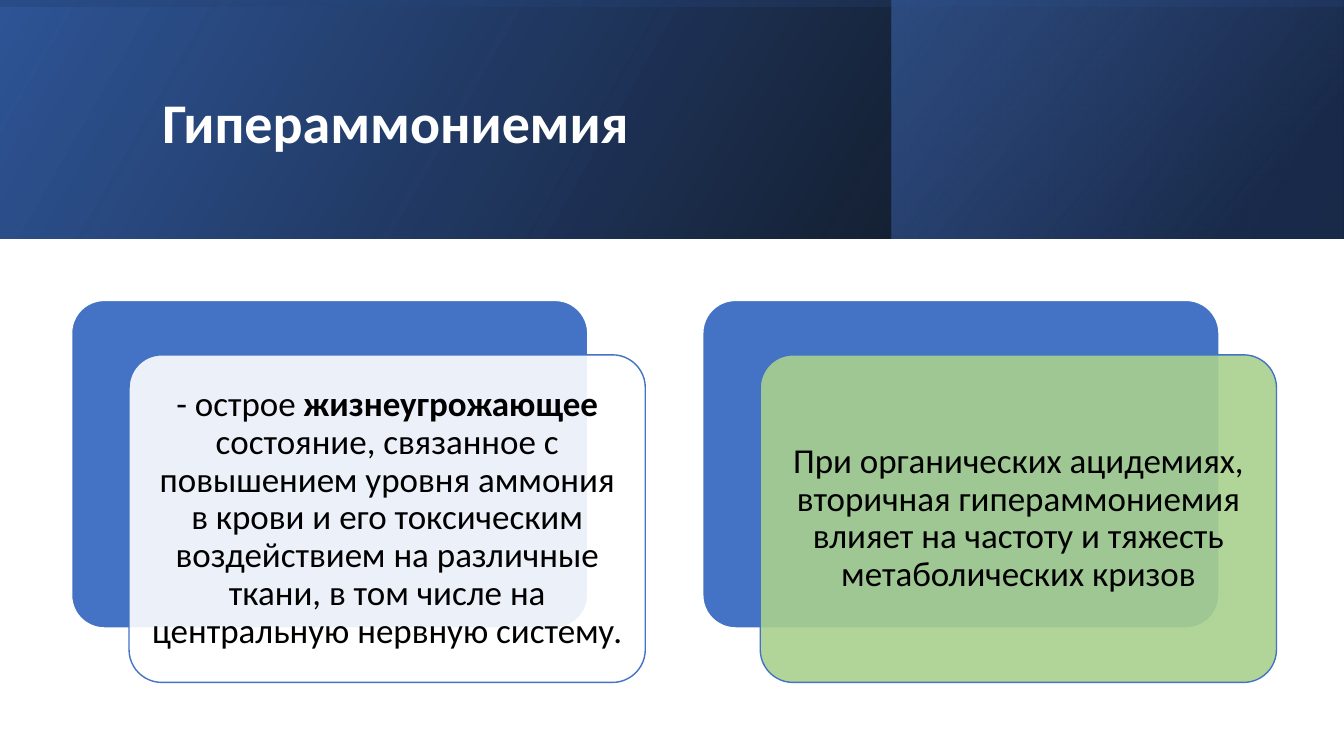
from lxml import etree
from pptx import Presentation
from pptx import util as u
from pptx.dml.color import RGBColor
from pptx.enum import shapes, text
from pptx.oxml import ns

WHITE = RGBColor(0xFF, 0xFF, 0xFF)
BLACK = RGBColor(0, 0, 0)
BLUE = RGBColor(0x44, 0x72, 0xC4)
DEEP_BLUE = RGBColor(0x2F, 0x55, 0x97)
NAVY = RGBColor(0x20, 0x38, 0x64)
GREEN = RGBColor(0xA9, 0xD1, 0x8E)
FONT = "Calibri"

# Content
TITLE = [("Гипераммониемия", True)]
CARDS = [
    (WHITE, [
        ("- острое ", False),
        ("жизнеугрожающее", True),
        (" состояние, связанное с повышением уровня аммония в крови и его токсическим "
         "воздействием на различные ткани, в том числе на центральную нервную систему.", False),
    ]),
    (GREEN, [
        ("При органических ацидемиях, вторичная гипераммониемия влияет на частоту "
         "и тяжесть метаболических кризов", False),
    ]),
]
# Header layers: box, rotation, gradient angle, stops (position %, colour, opacity %)
HEADER = [
    ((0, 0, 13.33, 2.37), 0, 330, [(0, BLACK, 96), (100, DEEP_BLUE, 100)]),
    ((8.84, 0, 4.48, 2.37), 0, 320, [(19, NAVY, 68), (100, BLUE, 48)]),
    ((5.48, -5.48, 2.37, 13.33), 270, 350, [(23, DEEP_BLUE, 16), (99, BLACK, 45)]),
]

# Layout of the cards
CARD_LEFT, CARD_TOP, CARD_STEP = 0.71, 2.98, 6.26
CARD_WIDTH, CARD_HEIGHT = 5.12, 3.25
FRONT_SHIFT_X, FRONT_SHIFT_Y = 0.57, 0.54


def add_element(parent, tag, **attributes):
    return etree.SubElement(parent, ns.qn(tag), {k: str(v) for k, v in attributes.items()})


def add_box(slide, kind, box):
    shape = slide.shapes.add_shape(kind, *[u.Inches(value) for value in box])
    shape.shadow.inherit = False
    return shape


def add_header_layer(slide, box, rotation, angle, stops):
    shape = add_box(slide, shapes.MSO_SHAPE.RECTANGLE, box)
    shape.rotation = rotation
    shape.line.fill.background()
    properties = shape._element.spPr
    properties.find(ns.qn("a:xfrm")).set("flipH", "1")
    gradient = etree.Element(ns.qn("a:gradFill"), rotWithShape="1")
    stop_list = add_element(gradient, "a:gsLst")
    for position, color, opacity in stops:
        stop = add_element(stop_list, "a:gs", pos=position * 1000)
        color_element = add_element(stop, "a:srgbClr", val=color)
        add_element(color_element, "a:alpha", val=opacity * 1000)
    add_element(gradient, "a:lin", ang=angle * 60000, scaled=0)
    properties.find(ns.qn("a:prstGeom")).addnext(gradient)


def add_card_layer(slide, left, top, fill, line, opacity=100):
    shape = add_box(slide, shapes.MSO_SHAPE.ROUNDED_RECTANGLE,
                    (left, top, CARD_WIDTH, CARD_HEIGHT))
    shape.adjustments[0] = 0.1
    shape.fill.solid()
    shape.fill.fore_color.rgb = fill
    shape.line.color.rgb = line
    shape.line.width = u.Pt(1)
    if opacity < 100:
        color_element = shape._element.spPr.find(ns.qn("a:solidFill"))[0]
        add_element(color_element, "a:alpha", val=opacity * 1000)
    return shape


def write_text(shape, runs, size, color, align, inset_y=0.05, space_after=0):
    frame = shape.text_frame
    frame.word_wrap = True
    frame.auto_size = text.MSO_AUTO_SIZE.NONE
    frame.vertical_anchor = text.MSO_ANCHOR.MIDDLE
    frame.margin_left = frame.margin_right = u.Inches(0.1)
    frame.margin_top = frame.margin_bottom = u.Inches(inset_y)
    paragraph = frame.paragraphs[0]
    paragraph.alignment = align
    paragraph.line_spacing = 0.9
    paragraph.space_after = u.Pt(space_after)
    for words, bold in runs:
        run = paragraph.add_run()
        run.text = words
        run.font.name = FONT
        run.font.size = u.Pt(size)
        run.font.bold = bold
        run.font.color.rgb = color


def main():
    presentation = Presentation()
    presentation.slide_width = u.Inches(13.33)
    presentation.slide_height = u.Inches(7.5)
    slide = presentation.slides.add_slide(presentation.slide_layouts[5])

    # Header band
    for layer in HEADER:
        add_header_layer(slide, *layer)

    # Title, raised above the band
    title = slide.shapes.title
    title.left, title.top = u.Inches(1.51), u.Inches(0.38)
    title.width, title.height = u.Inches(10.63), u.Inches(1.72)
    write_text(title, TITLE, 40, WHITE, text.PP_ALIGN.LEFT)
    slide.shapes._spTree.append(title._element)

    # Cards: a solid back and a translucent front with the text
    for index, (fill, runs) in enumerate(CARDS):
        left = CARD_LEFT + index * CARD_STEP
        add_card_layer(slide, left, CARD_TOP, BLUE, WHITE)
        front = add_card_layer(slide, left + FRONT_SHIFT_X, CARD_TOP + FRONT_SHIFT_Y,
                               fill, BLUE, opacity=90)
        write_text(front, runs, 25, BLACK, text.PP_ALIGN.CENTER,
                   inset_y=0.1, space_after=8.75)

    presentation.save("out.pptx")


if __name__ == "__main__":
    main()
